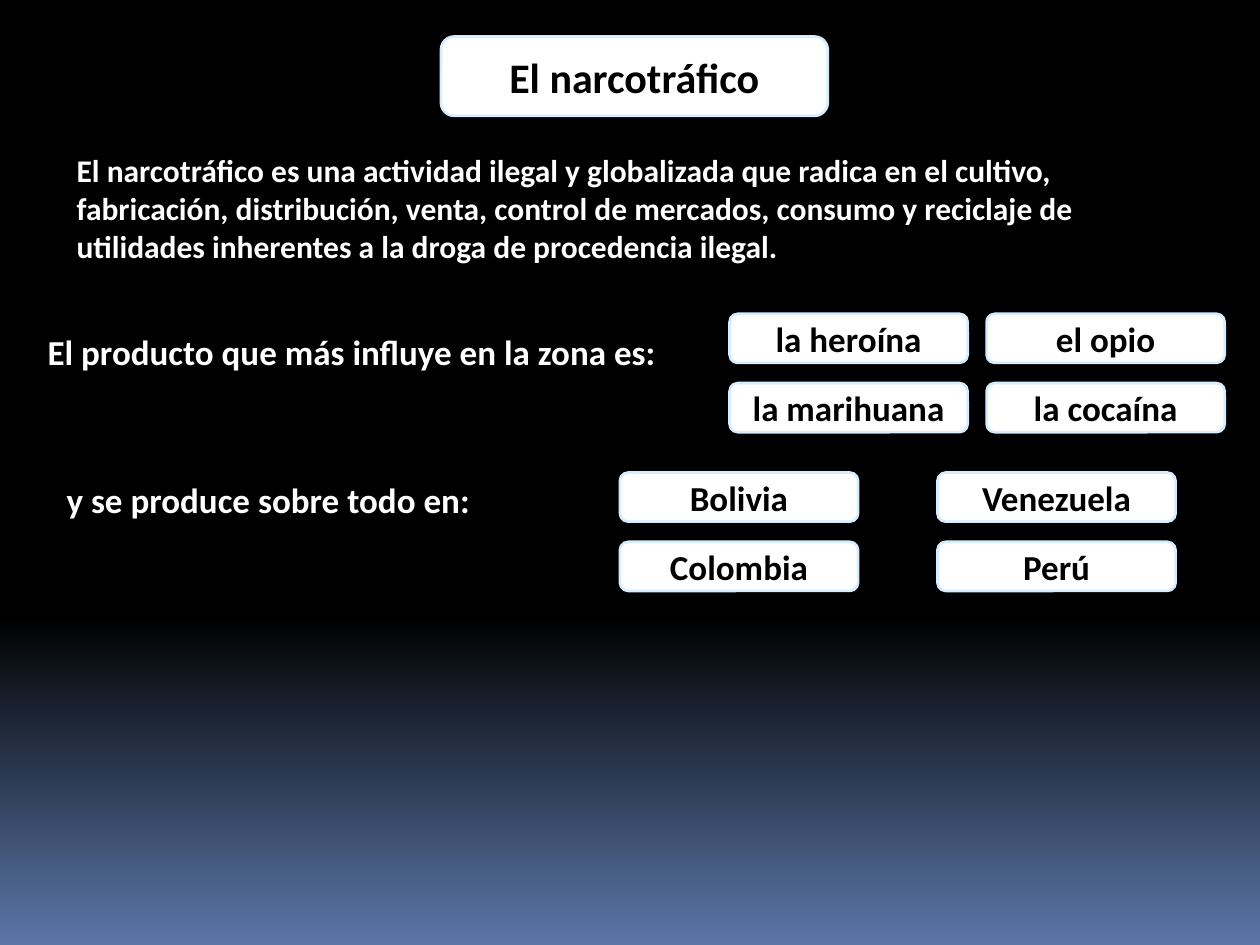
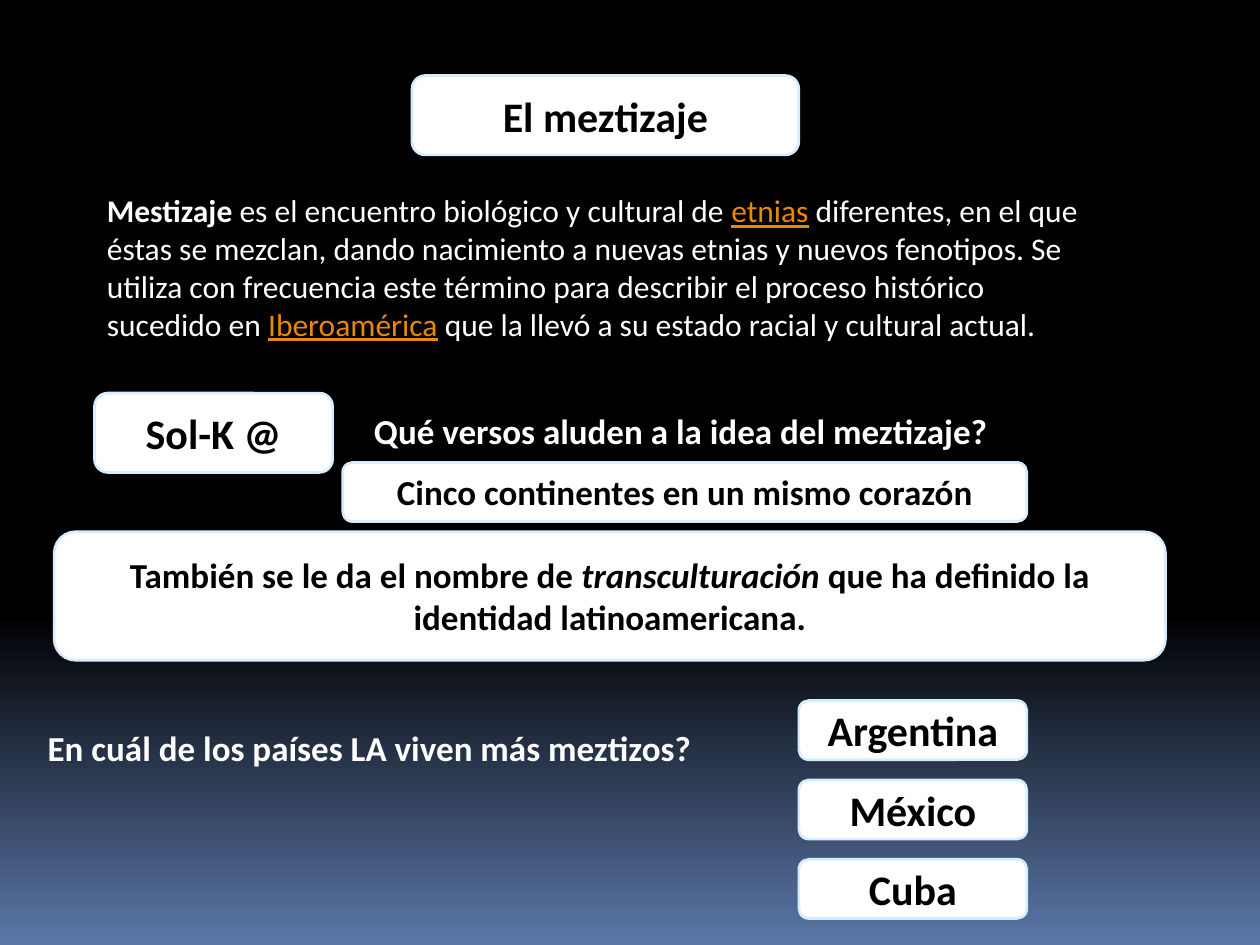
from pptx import Presentation
from pptx.dml.color import RGBColor
from pptx.enum.shapes import MSO_SHAPE
from pptx.enum.text import MSO_ANCHOR, MSO_AUTO_SIZE, PP_ALIGN
from pptx.util import Inches, Pt

COLORS = {
    "night": "000000",
    "dusk": "5B77A8",
    "card": "FFFFFF",
    "edge": "D6ECFF",
    "dark_text": "000000",
    "light_text": "FFFFFF",
    "term": "EB8803",
}
FONT = "Calibri"
TITLE_SIZE, PROMPT_SIZE, BODY_SIZE = 24, 20, 18
TITLE_BOX = (3.07, 0.63)
ANSWER_BOX = (1.89, 0.39)
ANSWER_ROW_STEP = 0.55
COUNTRY_BOX = (1.81, 0.47)
COUNTRY_ROW_STEP = 0.63
TERM = {"bold": False, "underline": True, "color": "term"}
PLAIN = {"bold": False}


def rgb(name):
    """Return the named palette colour."""
    return RGBColor.from_string(COLORS[name])


def write_spans(para, spans, size, color):
    """Write (text, format) spans, bold unless their format differs."""
    for text, changes in spans:
        values = {"name": FONT, "size": Pt(size), "bold": True, "color": color, **changes}
        span = para.add_run()
        span.text = text
        span.font.color.rgb = rgb(values.pop("color"))
        for key, value in values.items():
            setattr(span.font, key, value)


def add_card(page, box, spans, size=PROMPT_SIZE):
    """Add a white rounded card with centred dark text."""
    card = page.shapes.add_shape(MSO_SHAPE.ROUNDED_RECTANGLE, *map(Inches, box))
    card.shadow.inherit = False
    card.fill.solid()
    card.fill.fore_color.rgb = rgb("card")
    card.line.color.rgb = rgb("edge")
    card.line.width = Pt(1.5)
    frame = card.text_frame
    frame.word_wrap = True
    frame.vertical_anchor = MSO_ANCHOR.MIDDLE
    para = frame.paragraphs[0]
    para.alignment = PP_ALIGN.CENTER
    write_spans(para, spans, size, "dark_text")


def add_text(page, box, spans, size=PROMPT_SIZE, wrap=False):
    """Add light text directly on the background."""
    frame = page.shapes.add_textbox(*map(Inches, box)).text_frame
    frame.word_wrap = wrap
    frame.auto_size = MSO_AUTO_SIZE.SHAPE_TO_FIT_TEXT
    para = frame.paragraphs[0]
    para.alignment = PP_ALIGN.LEFT
    write_spans(para, spans, size, "light_text")


def add_card_grid(page, box, rows, column_step, row_step, size=PROMPT_SIZE):
    """Repeat a card in even columns and rows from the first card's box."""
    left, top, width, height = box
    for row, labels in enumerate(rows):
        for column, label in enumerate(labels):
            place = (left + column * column_step, top + row * row_step, width, height)
            add_card(page, place, [(label, {})], size)


def add_page(deck, title, left, top):
    """Add a page with the night sky gradient and its title card."""
    page = deck.slides.add_slide(deck.slide_layouts[6])
    fill = page.background.fill
    fill.gradient()
    fill.gradient_angle = 270
    for stop, position, name in zip(fill.gradient_stops, (0.65, 1), ("night", "dusk")):
        stop.position = position
        stop.color.rgb = rgb(name)
    add_card(page, (left, top, *TITLE_BOX), [(title, {})], TITLE_SIZE)
    return page


def build_drug_trade(deck):
    """Build the page on drug trade, its products and producers."""
    page = add_page(deck, "El narcotráfico", 3.5, 0.29)
    definition = (
        "El narcotráfico es una actividad ilegal y globalizada que radica en el cultivo, "
        "fabricación, distribución, venta, control de mercados, consumo y reciclaje de "
        "utilidades inherentes a la droga de procedencia ilegal."
    )
    add_text(page, (0.51, 1.15, 8.5, 1.01), [(definition, {})], BODY_SIZE, wrap=True)
    products = [("la heroína", "el opio"), ("la marihuana", "la cocaína")]
    producers = [("Bolivia", "Venezuela"), ("Colombia", "Perú")]
    questions = [
        ("El producto que más influye en la zona es:", (0.28, 2.57, 5.23, 0.44),
         products, (5.79, 2.49), 2.04),
        ("y se produce sobre todo en:", (0.43, 3.75, 3.57, 0.44),
         producers, (4.92, 3.75), 2.52),
    ]
    for prompt, prompt_box, answers, corner, column_step in questions:
        add_text(page, prompt_box, [(prompt, {})])
        add_card_grid(page, (*corner, *ANSWER_BOX), answers, column_step, ANSWER_ROW_STEP)


def build_mestizaje(deck):
    """Build the page on mestizaje, its song verse and countries."""
    page = add_page(deck, "El meztizaje", 3.27, 0.6)
    definition = [
        ("Mestizaje", {}),
        (" es el encuentro biológico y cultural de ", PLAIN),
        ("etnias", TERM),
        (" diferentes, en el que éstas se mezclan, dando nacimiento a nuevas etnias y "
         "nuevos fenotipos. Se utiliza con frecuencia este término para describir el "
         "proceso histórico sucedido en ", PLAIN),
        ("Iberoamérica", TERM),
        (" que la llevó a su estado racial y cultural actual.", PLAIN),
    ]
    add_text(page, (0.75, 1.47, 8.11, 1.31), definition, BODY_SIZE, wrap=True)
    add_card(page, (0.75, 3.12, 1.89, 0.63), [("Sol-K @", {})], TITLE_SIZE)
    add_text(page, (2.87, 3.2, 5.26, 0.44), [("Qué versos aluden a la idea del meztizaje?", {})])
    add_card(page, (2.72, 3.67, 5.43, 0.47), [("Cinco continentes en un mismo corazón", {})])
    other_name = [
        ("También se le da el nombre de ", {}),
        ("transculturación ", {"italic": True}),
        ("que ha definido la identidad latinoamericana.", {}),
    ]
    add_card(page, (0.43, 4.22, 8.82, 1.02), other_name)
    add_text(page, (0.28, 5.72, 5.59, 0.44),
             [("En cuál de los países LA viven más meztizos?", {})])
    countries = [("Argentina",), ("México",), ("Cuba",)]
    add_card_grid(page, (6.34, 5.56, *COUNTRY_BOX), countries, 0, COUNTRY_ROW_STEP, TITLE_SIZE)


def main():
    """Build and save the deck."""
    deck = Presentation()
    deck.slide_width, deck.slide_height = Inches(10), Inches(7.5)
    build_drug_trade(deck)
    build_mestizaje(deck)
    deck.save("out.pptx")


if __name__ == "__main__":
    main()
